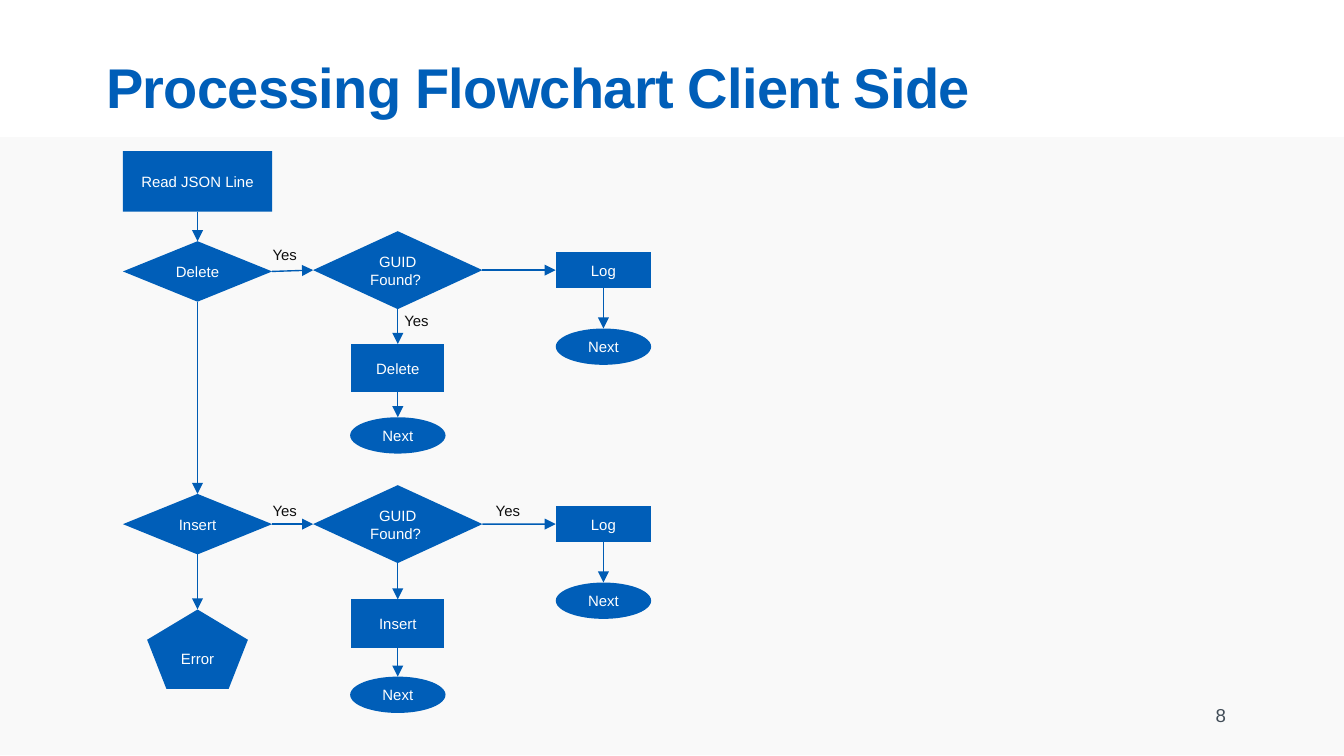
from lxml import etree
from pptx import Presentation
from pptx.dml.color import RGBColor
from pptx.enum.shapes import MSO_CONNECTOR, MSO_SHAPE
from pptx.enum.text import MSO_ANCHOR, PP_ALIGN
from pptx.oxml.ns import qn
from pptx.util import Inches, Pt

BLUE = RGBColor(0x00, 0x5E, 0xB8)
EDGE = RGBColor(0x00, 0x5C, 0xB4)
PALE = RGBColor(0xF9, 0xF9, 0xF9)
WHITE = RGBColor(0xFF, 0xFF, 0xFF)
BLACK = RGBColor(0x0F, 0x0F, 0x0F)
GRAY = RGBColor(0x42, 0x4D, 0x58)
RECT = MSO_SHAPE.RECTANGLE
CHOICE = MSO_SHAPE.FLOWCHART_DECISION
STEP = MSO_SHAPE.FLOWCHART_PROCESS
ROUND = MSO_SHAPE.FLOWCHART_CONNECTOR
FIVE = MSO_SHAPE.REGULAR_PENTAGON
LINE = MSO_CONNECTOR.STRAIGHT
LEFT, MID, RIGHT = PP_ALIGN.LEFT, PP_ALIGN.CENTER, PP_ALIGN.RIGHT
MIDDLE = MSO_ANCHOR.MIDDLE

deck = Presentation()
deck.slide_width = Inches(10)
deck.slide_height = Inches(10) * 9 // 16
slide = deck.slides.add_slide(deck.slide_layouts[6])
shapes = slide.shapes


def write(shape, text, size, color, align):
    frame = shape.text_frame
    frame.text = text
    para = frame.paragraphs[0]
    para.alignment = align
    font = para.runs[0].font
    font.name = "Arial"
    font.size = Pt(size)
    font.color.rgb = color
    return font


def draw(kind, mid_x, mid_y, width, height, fill, text=""):
    left, top = mid_x - width / 2, mid_y - height / 2
    shape = shapes.add_shape(kind, Inches(left), Inches(top), Inches(width), Inches(height))
    shape.shadow.inherit = False
    shape.fill.solid()
    shape.fill.fore_color.rgb = fill
    shape.line.fill.background()
    if text:
        write(shape, text, 8, WHITE, MID)
        shape.text_frame.vertical_anchor = MIDDLE
    return shape


draw(RECT, 5, 3.32, 10, 4.6, PALE)

title = shapes.add_textbox(Inches(0.79), Inches(0.39), Inches(8.35), Inches(0.58))
frame = title.text_frame
frame.word_wrap = True
frame.margin_left = frame.margin_right = frame.margin_top = frame.margin_bottom = 0
font = write(title, "Processing Flowchart Client Side", 30, BLUE, LEFT)
font.bold = True
font._element.set("spc", "-40")

page = shapes.add_textbox(Inches(6.89), Inches(5.17), Inches(2.33), Inches(0.3))
page.text_frame.word_wrap = True
page.text_frame.vertical_anchor = MIDDLE
write(page, "8", 10, GRAY, RIGHT)

col_a, col_b, col_c = 1.47, 2.96, 4.49
last = draw(RECT, col_a, 1.35, 1.11, 0.45, BLUE, "Read JSON Line")
down, across = [], []
for name, test_y, row, act_y, end_y in (
    ("Delete", 2.02, 2.01, 2.74, 3.24),
    ("Insert", 3.9, 3.9, 4.64, 5.17),
):
    test = draw(CHOICE, col_a, test_y, 1.11, 0.45, BLUE, name)
    found = draw(CHOICE, col_b, row, 1.26, 0.58, BLUE, "GUID Found? ")
    log = draw(STEP, col_c, row, 0.71, 0.27, BLUE, "Log")
    log_end = draw(ROUND, col_c, row + 0.57, 0.71, 0.27, BLUE, "Next")
    act = draw(STEP, col_b, act_y, 0.69, 0.36, BLUE, name)
    act_end = draw(ROUND, col_b, end_y, 0.71, 0.27, BLUE, "Next")
    down += [(last, test), (found, act), (act, act_end), (log, log_end)]
    across += [(test, found), (found, log)]
    last = test
error = draw(FIVE, col_a, 4.83, 0.75, 0.59, BLUE, "Error")
down.append((last, error))

for pairs, start, end in ((down, 2, 0), (across, 3, 1)):
    for source, target in pairs:
        arrow = shapes.add_connector(LINE, 0, 0, 0, 0)
        arrow.begin_connect(source, start)
        arrow.end_connect(target, end)
        arrow.line.color.rgb = EDGE
        arrow.line.width = Pt(0.75)
        etree.SubElement(arrow.line._get_or_add_ln(), qn("a:tailEnd"), type="triangle")
        etree.SubElement(arrow._element.spPr, qn("a:effectLst"))

for left, top in ((1.93, 1.78), (2.91, 2.27), (3.59, 3.68), (1.93, 3.68)):
    label = shapes.add_textbox(Inches(left), Inches(top), Inches(0.4), Inches(0.24))
    label.text_frame.word_wrap = False
    write(label, "Yes", 8, BLACK, LEFT)

deck.save("out.pptx")
